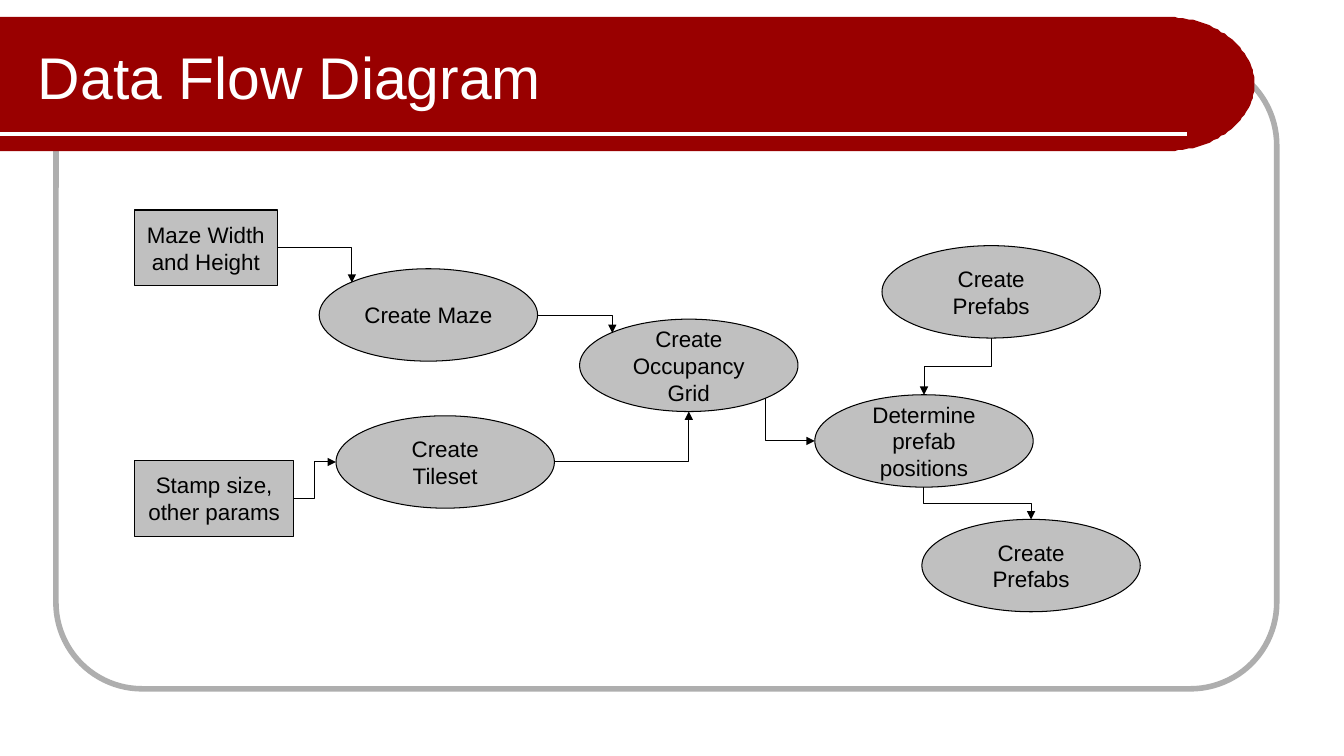
import math
from lxml import etree
from pptx import Presentation
from pptx.dml.color import RGBColor
from pptx.enum import shapes as sh, text as tx
from pptx.oxml import ns
from pptx.util import Pt

RED = RGBColor(0x99, 0, 0)
WHITE = RGBColor(255, 255, 255)
BLACK = RGBColor(0, 0, 0)
GREY = RGBColor(0xC0, 0xC0, 0xC0)
EDGE = RGBColor(0xAE, 0xAE, 0xAE)
RECT = sh.MSO_SHAPE.RECTANGLE
OVAL = sh.MSO_SHAPE.OVAL

deck = Presentation()
deck.slide_width, deck.slide_height = Pt(960), Pt(540)
slide = deck.slides.add_slide(deck.slide_layouts[6])
parts = slide.shapes


def label(shape, words, size, color, align):
    frame = shape.text_frame
    frame.word_wrap = True
    frame.vertical_anchor = tx.MSO_ANCHOR.MIDDLE
    para = frame.paragraphs[0]
    para.text = words
    para.alignment = align
    para.font.name = "Arial"
    para.font.size = Pt(size)
    para.font.color.rgb = color


def link(kind, start, end, color, width):
    wire = parts.add_connector(kind, *[Pt(v) for v in start + end])
    wire.line.color.rgb = color
    wire.line.width = Pt(width)
    etree.SubElement(wire.element.spPr, ns.qn("a:effectLst"))
    return wire


frame = parts.add_shape(sh.MSO_SHAPE.ROUNDED_RECTANGLE, Pt(40), Pt(42), Pt(872), Pt(450))
frame.adjustments[0] = 0.137
frame.fill.background()
frame.line.color.rgb = EDGE
frame.line.width = Pt(4)
frame.shadow.inherit = False

arc = [math.radians(a) for a in range(-90, 91, 3)]
path = [(832 + 64 * math.cos(a), 60 + 48 * math.sin(a)) for a in arc]
build = parts.build_freeform(0, 12, scale=Pt(1))
build.add_line_segments(path + [(0, 108)], close=True)
band = build.convert_to_shape()
band.fill.solid()
band.fill.fore_color.rgb = RED
band.line.fill.background()
band.shadow.inherit = False

link(sh.MSO_CONNECTOR.STRAIGHT, (0, 96), (848, 96), WHITE, 3)
title = parts.add_textbox(Pt(20), Pt(18), Pt(747), Pt(72))
label(title, "Data Flow Diagram", 42, WHITE, tx.PP_ALIGN.LEFT)

nodes = {
    "size": ("Maze Width and Height", RECT, 96, 150, 102, 54),
    "maze": ("Create Maze", OVAL, 228, 192, 156, 66),
    "tiles": ("Create Tileset", OVAL, 240, 297, 156, 66),
    "stamp": ("Stamp size, other params", RECT, 96, 329, 114, 54),
    "grid": ("Create Occupancy Grid", OVAL, 414, 228, 156, 66),
    "first": ("Create Prefabs", OVAL, 630, 175.5, 156, 66),
    "spots": ("Determine prefab positions", OVAL, 582, 282, 156, 66),
    "last": ("Create Prefabs", OVAL, 658.5, 371, 156, 66),
}
for words, kind, *box in nodes.values():
    node = parts.add_shape(kind, *[Pt(v) for v in box])
    node.fill.solid()
    node.fill.fore_color.rgb = GREY
    node.line.color.rgb = BLACK
    node.line.width = Pt(0.75)
    node.shadow.inherit = False
    label(node, words, 16, BLACK, tx.PP_ALIGN.CENTER)

LOW, HIGH = 0.15, 0.85
sites = {"top": (0.5, 0), "left": (0, 0.5), "bottom": (0.5, 1), "right": (1, 0.5),
         "nw": (LOW, LOW), "se": (HIGH, HIGH)}
flows = [
    ("size", "right", "maze", "nw", 2),
    ("stamp", "right", "tiles", "left", 3),
    ("maze", "right", "grid", "nw", 2),
    ("tiles", "right", "grid", "bottom", 2),
    ("first", "bottom", "spots", "top", 3),
    ("grid", "se", "spots", "left", 2),
    ("spots", "bottom", "last", "top", 3),
]
for source, out, target, into, bend in flows:
    ends = []
    for name, site in ((source, out), (target, into)):
        left, top, wide, high = nodes[name][2:]
        across, down = sites[site]
        ends.append((left + wide * across, top + high * down))
    turned = out != "right"
    if turned:
        midx, midy = [sum(pair) / 2 for pair in zip(*ends)]
        ends = [(midx + y - midy, midy - x + midx) for x, y in ends]
    wire = link(sh.MSO_CONNECTOR.ELBOW, *ends, BLACK, 0.75)
    props = wire.element.spPr
    props.find(ns.qn("a:prstGeom")).set("prst", f"bentConnector{bend}")
    if turned:
        props.find(ns.qn("a:xfrm")).set("rot", "5400000")
    etree.SubElement(props.find(ns.qn("a:ln")), ns.qn("a:tailEnd"), type="triangle")

deck.save("out.pptx")
